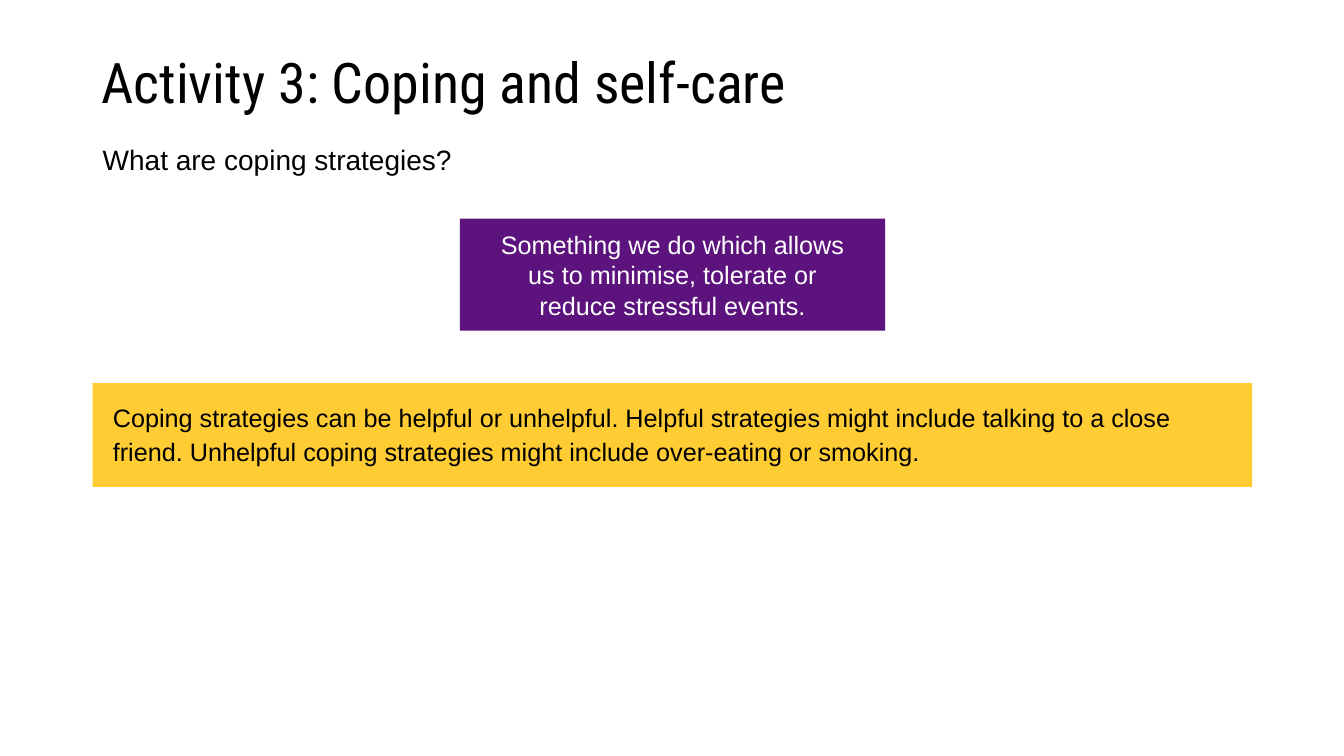
from dataclasses import dataclass

from pptx import Presentation
from pptx import util as u
from pptx.dml.color import RGBColor
from pptx.enum import shapes, text


@dataclass(frozen=True)
class Theme:
    heading_font: str = "Roboto Condensed"
    body_font: str = "Arial"
    title_size: int = 40
    question_size: int = 20
    panel_size: int = 18
    black: str = "000000"
    white: str = "FFFFFF"
    purple: str = "5D137D"
    yellow: str = "FFCC33"


class SlideBuilder:
    def __init__(self, slide, theme):
        self.slide = slide
        self.theme = theme

    def set_text(self, shape, wording, size, color, font, anchor, align, spacing, insets):
        """Fill a shape with one paragraph; insets run left, top, right, bottom."""
        frame = shape.text_frame
        frame.word_wrap = True
        frame.vertical_anchor = anchor
        frame.margin_left, frame.margin_top, frame.margin_right, frame.margin_bottom = (
            u.Inches(inset) for inset in insets
        )
        paragraph = frame.paragraphs[0]
        paragraph.alignment = align
        paragraph.line_spacing = spacing
        run = paragraph.add_run()
        run.text = wording
        run.font.name = font
        run.font.size = u.Pt(size)
        run.font.color.rgb = RGBColor.from_string(color)

    def add_text(self, box, wording, size, font, anchor=text.MSO_ANCHOR.TOP):
        shape = self.slide.shapes.add_textbox(*map(u.Inches, box))
        self.set_text(shape, wording, size, self.theme.black, font, anchor,
                      text.PP_ALIGN.LEFT, 0.9, (0.1, 0.05, 0.1, 0.05))

    def add_panel(self, box, wording, fill, color, anchor, align, spacing, insets):
        shape = self.slide.shapes.add_shape(
            shapes.MSO_SHAPE.RECTANGLE, *map(u.Inches, box))
        shape.shadow.inherit = False
        shape.fill.solid()
        shape.fill.fore_color.rgb = RGBColor.from_string(fill)
        shape.line.fill.background()
        self.set_text(shape, wording, self.theme.panel_size, color,
                      self.theme.body_font, anchor, align, spacing, insets)


def main():
    presentation = Presentation()
    presentation.slide_width = u.Inches(13.33)
    presentation.slide_height = u.Inches(7.5)
    theme = Theme()
    slide = presentation.slides.add_slide(presentation.slide_layouts[6])
    builder = SlideBuilder(slide, theme)

    builder.add_text((0.91, 0.39, 11.5, 0.91), "Activity 3: Coping and self-care",
                     theme.title_size, theme.heading_font, text.MSO_ANCHOR.MIDDLE)
    builder.add_text((0.92, 1.4, 11.5, 0.85), "What are coping strategies?",
                     theme.question_size, theme.body_font)
    builder.add_panel(
        (4.56, 2.17, 4.22, 1.11),
        "Something we do which allows us to minimise, tolerate or reduce "
        "stressful events.",
        theme.purple, theme.white, text.MSO_ANCHOR.MIDDLE, text.PP_ALIGN.CENTER,
        1.0, (0.28, 0.05, 0.28, 0.05))
    builder.add_panel(
        (0.92, 3.8, 11.5, 1.03),
        "Coping strategies can be helpful or unhelpful. Helpful strategies might "
        "include talking to a close friend. Unhelpful coping strategies might "
        "include over-eating or smoking.",
        theme.yellow, theme.black, text.MSO_ANCHOR.TOP, text.PP_ALIGN.LEFT,
        u.Pt(24), (0.2, 0.16, 0.2, 0.05))

    presentation.save("out.pptx")


if __name__ == "__main__":
    main()
